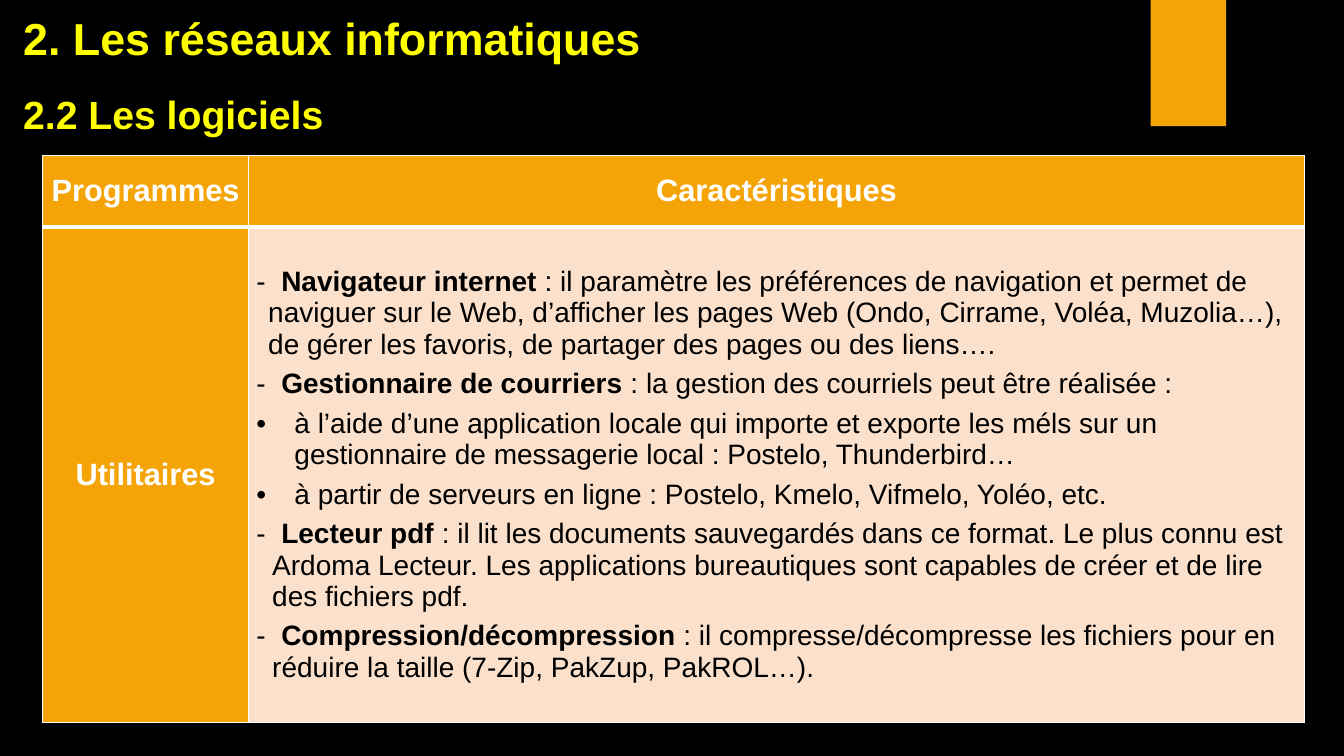
from lxml.etree import SubElement
from pptx import Presentation
from pptx.dml.color import RGBColor
from pptx.enum.shapes import MSO_SHAPE as Shape
from pptx.enum.text import MSO_ANCHOR as Anchor, MSO_AUTO_SIZE as AutoSize, PP_ALIGN as Align
from pptx.oxml.ns import qn
from pptx.util import Cm, Pt

BLACK = RGBColor(0x00, 0x00, 0x00)
WHITE = RGBColor(0xFF, 0xFF, 0xFF)
YELLOW = RGBColor(0xFF, 0xFF, 0x00)
ORANGE = RGBColor(0xF5, 0xA4, 0x08)
PEACH = RGBColor(0xFB, 0xE0, 0xCC)
FONT = "Arial"

HEADINGS = [("2. Les réseaux informatiques", 32), ("2.2 Les logiciels", 28)]
COLUMNS = [("Programmes", 5.2), ("Caractéristiques", 26.6)]
ROW_HEIGHTS = [1.8, 12.48]
CATEGORY = "Utilitaires"
FEATURES = [
    (0.3, "Navigateur internet ",
     ": il paramètre les préférences de navigation et permet de naviguer sur le Web, "
     "d’afficher les pages Web (Ondo, Cirrame, Voléa, Muzolia…), de gérer les favoris, "
     "de partager des pages ou des liens…."),
    (0, "Gestionnaire de courriers ", ": la gestion des courriels peut être réalisée :"),
    (0.96, "",
     "à l’aide d’une application locale qui importe et exporte les méls sur un "
     "gestionnaire de messagerie local : Postelo, Thunderbird…"),
    (0.96, "", "à partir de serveurs en ligne : Postelo, Kmelo, Vifmelo, Yoléo, etc."),
    (0.4, "Lecteur pdf ",
     ": il lit les documents sauvegardés dans ce format. Le plus connu est Ardoma Lecteur. "
     "Les applications bureautiques sont capables de créer et de lire des fichiers pdf."),
    (0.4, "Compression/décompression ",
     ": il compresse/décompresse les fichiers pour en réduire la taille "
     "(7-Zip, PakZup, PakROL…)."),
]


class SlideBuilder:
    def __init__(self, presentation):
        self.slide = presentation.slides.add_slide(presentation.slide_layouts[5])
        background = self.slide.background.fill
        background.solid()
        background.fore_color.rgb = BLACK

    def run(self, paragraph, text, size, color, bold=False):
        run = paragraph.add_run()
        run.text = text
        run.font.name = FONT
        run.font.size = Pt(size)
        run.font.bold = bold
        run.font.color.rgb = color

    def paragraph(self, frame, index, space_before):
        if index == 0:
            return frame.paragraphs[0]
        paragraph = frame.add_paragraph()
        paragraph.space_before = Pt(space_before)
        return paragraph

    def title(self, headings, left, top, width, height):
        title = self.slide.shapes.title
        title.left, title.top, title.width, title.height = map(Cm, (left, top, width, height))
        frame = title.text_frame
        frame.word_wrap = True
        frame.auto_size = AutoSize.NONE
        frame.vertical_anchor = Anchor.TOP
        for index, (text, size) in enumerate(headings):
            paragraph = self.paragraph(frame, index, 18)
            paragraph.alignment = Align.LEFT
            self.run(paragraph, text, size, YELLOW, True)

    def rectangle(self, left, top, width, height, color):
        shape = self.slide.shapes.add_shape(Shape.RECTANGLE, *map(Cm, (left, top, width, height)))
        shape.shadow.inherit = False
        shape.fill.solid()
        shape.fill.fore_color.rgb = color
        shape.line.fill.background()

    def table(self, left, top, widths, heights):
        frame = self.slide.shapes.add_table(
            len(heights), len(widths), Cm(left), Cm(top), Cm(sum(widths)), Cm(sum(heights)))
        table = frame.table
        for column, width in zip(table.columns, widths):
            column.width = Cm(width)
        for row, height in zip(table.rows, heights):
            row.height = Cm(height)
        return table

    def cell(self, cell, color, top_border=1, bottom_border=1):
        cell.vertical_anchor = Anchor.MIDDLE
        cell.margin_left = cell.margin_right = Cm(0.19)
        cell.margin_top = cell.margin_bottom = 0
        properties = cell._tc.get_or_add_tcPr()
        borders = {"a:lnL": 1, "a:lnR": 1, "a:lnT": top_border, "a:lnB": bottom_border}
        for side, weight in borders.items():
            line = SubElement(properties, qn(side), w=str(Pt(weight)))
            fill = SubElement(line, qn("a:solidFill"))
            SubElement(fill, qn("a:srgbClr"), val=str(WHITE))
        cell.fill.solid()
        cell.fill.fore_color.rgb = color

    def label_cell(self, cell, text, **borders):
        self.cell(cell, ORANGE, **borders)
        paragraph = cell.text_frame.paragraphs[0]
        paragraph.alignment = Align.CENTER
        self.run(paragraph, text, 22, WHITE, True)

    def feature_cell(self, cell, features, **borders):
        self.cell(cell, PEACH, **borders)
        for index, (indent, name, description) in enumerate(features):
            paragraph = self.paragraph(cell.text_frame, index, 6)
            properties = paragraph._p.get_or_add_pPr()
            properties.set("marL", str(Cm(indent)))
            properties.set("indent", str(-Cm(indent)))
            if name:
                self.run(paragraph, "-  ", 20, BLACK)
                self.run(paragraph, name, 20, BLACK, True)
            else:
                SubElement(properties, qn("a:buFont"), typeface=FONT)
                SubElement(properties, qn("a:buChar"), char="•")
            self.run(paragraph, description, 20, BLACK)


def main():
    presentation = Presentation()
    presentation.slide_width = Cm(33.87)
    presentation.slide_height = Cm(19.05)

    builder = SlideBuilder(presentation)
    builder.rectangle(29, 0, 1.9, 3.18, ORANGE)
    builder.title(HEADINGS, 0.33, 0.15, 23.75, 3.45)

    table = builder.table(1.07, 3.92, [width for _, width in COLUMNS], ROW_HEIGHTS)
    for index, (heading, _) in enumerate(COLUMNS):
        builder.label_cell(table.cell(0, index), heading, bottom_border=3)
    builder.label_cell(table.cell(1, 0), CATEGORY, top_border=3)
    builder.feature_cell(table.cell(1, 1), FEATURES, top_border=3)

    presentation.save("out.pptx")


if __name__ == "__main__":
    main()
